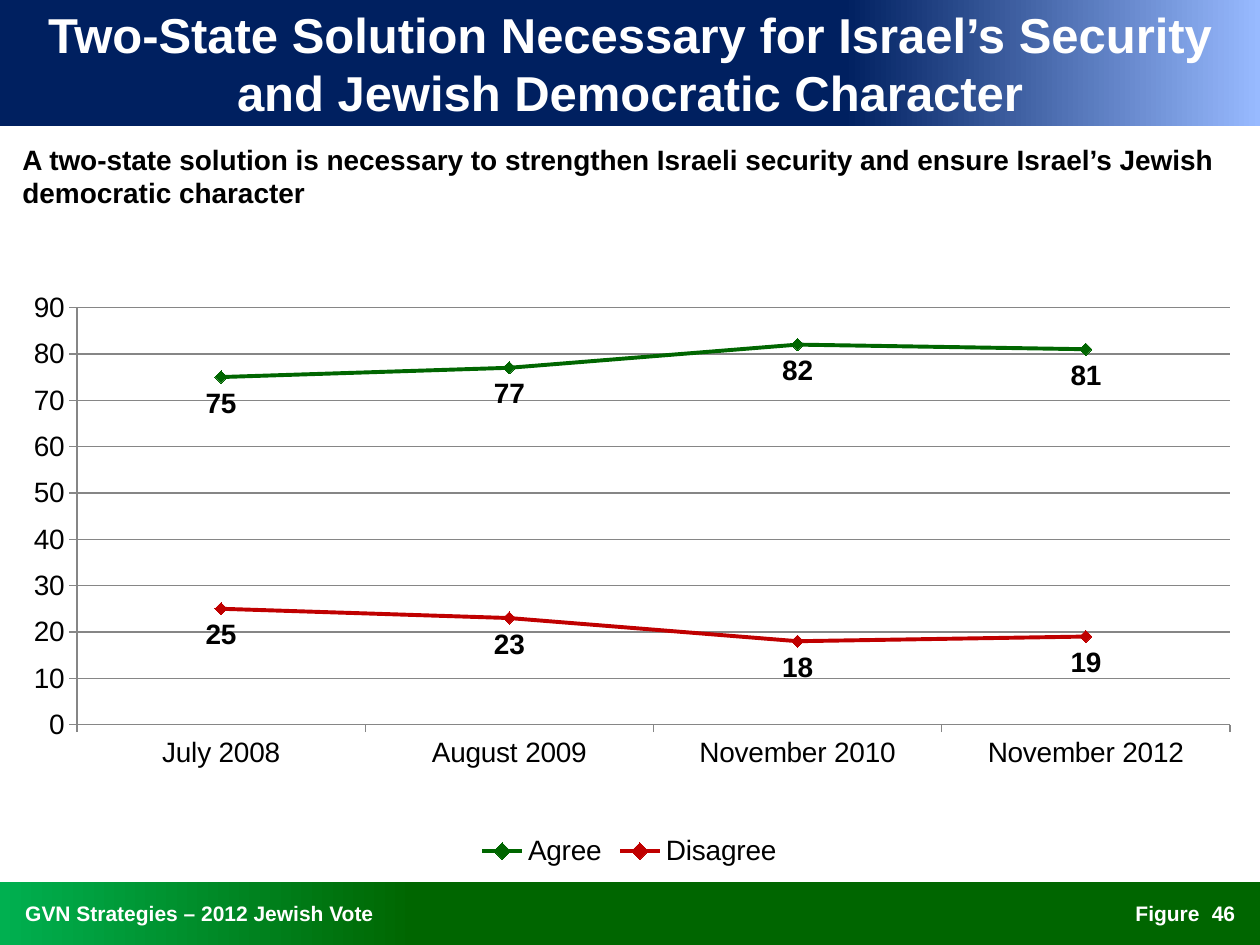
import dataclasses

import lxml.etree
import pptx
import pptx.chart.data
import pptx.dml.color
import pptx.enum.chart
import pptx.enum.shapes
import pptx.enum.text
import pptx.oxml
import pptx.oxml.ns
import pptx.util

Inches = pptx.util.Inches
Pt = pptx.util.Pt
Align = pptx.enum.text.PP_ALIGN
Anchor = pptx.enum.text.MSO_ANCHOR


def rgb(code):
    return pptx.dml.color.RGBColor.from_string(code)


@dataclasses.dataclass(frozen=True)
class Theme:
    font: str = "Arial"
    white: str = "FFFFFF"
    black: str = "000000"
    navy: str = "002060"
    sky: str = "98BAFF"
    green: str = "006600"
    lime: str = "00B050"
    red: str = "C00000"
    grey: str = "868686"
    head: int = 28
    body: int = 16
    foot: int = 12


THEME = Theme()


def add_band(slide, box, start, end, angle):
    band = slide.shapes.add_shape(
        pptx.enum.shapes.MSO_SHAPE.RECTANGLE, *map(Inches, box))
    band.shadow.inherit = False
    band.line.fill.background()
    band.fill.gradient()
    band.fill.gradient_angle = angle
    stops = band.fill.gradient_stops
    for stop, code, place in zip(stops, (start, end), (0, 0.33)):
        stop.color.rgb = rgb(code)
        stop.position = place


def add_text(slide, box, text, size, color, align=Align.LEFT,
             anchor=Anchor.MIDDLE, wrap=True, left=0.1, right=0.1):
    frame = slide.shapes.add_textbox(*map(Inches, box)).text_frame
    frame.text = text
    frame.word_wrap = wrap
    frame.vertical_anchor = anchor
    frame.margin_left, frame.margin_right = Inches(left), Inches(right)
    line = frame.paragraphs[0]
    line.alignment = align
    font = line.runs[0].font
    font.name, font.size, font.bold = THEME.font, Pt(size), True
    font.color.rgb = rgb(color)
    return line


def add_head(slide, box, text):
    add_band(slide, box, THEME.sky, THEME.navy, 180)
    add_text(slide, box, text, THEME.head, THEME.white, Align.CENTER,
             left=0.2, right=0.2)


def add_lead(slide, box, text):
    line = add_text(slide, box, text, THEME.body, THEME.black,
                    anchor=Anchor.TOP)
    line.space_before = Pt(0.2 * THEME.body)


def add_foot(slide, box, source, label, number):
    x, y, width, height = box
    end = x + width
    add_band(slide, box, THEME.lime, THEME.green, 0)
    add_text(slide, (end - 1.55, y, 1.17, height), label, THEME.foot,
             THEME.white, Align.RIGHT, wrap=False)
    add_text(slide, (x, y, 6.92, height), source, THEME.foot,
             THEME.white, wrap=False, left=0.2)
    add_text(slide, (end - 0.58, y, 0.58, height), number, THEME.foot,
             THEME.white, Align.CENTER)


def set_plot(chart, x, y, width, height):
    area = chart._chartSpace.chart.plotArea
    tag = pptx.oxml.ns.qn
    for old in area.findall(tag("c:layout")):
        area.remove(old)
    layout = lxml.etree.Element(tag("c:layout"))
    manual = lxml.etree.SubElement(layout, tag("c:manualLayout"))
    rules = {"layoutTarget": "inner", "xMode": "edge", "yMode": "edge",
             "x": x, "y": y, "w": width, "h": height}
    for name, value in rules.items():
        lxml.etree.SubElement(manual, tag(f"c:{name}"), val=str(value))
    area.insert(0, layout)


def style_line(series, color):
    series.smooth = False
    series.format.line.width = Pt(2.25)
    series.format.line.color.rgb = rgb(color)
    mark = series.marker
    mark.style = pptx.enum.chart.XL_MARKER_STYLE.DIAMOND
    mark.size = 7
    mark.format.fill.solid()
    mark.format.fill.fore_color.rgb = rgb(color)
    mark.format.line.color.rgb = rgb(color)
    labels = series.data_labels
    labels.show_value = True
    labels.position = pptx.enum.chart.XL_LABEL_POSITION.BELOW
    font = labels.font
    font.name, font.size, font.bold = THEME.font, Pt(THEME.body), True
    font.color.rgb = rgb(THEME.black)


def add_trend(slide, box, dates, rows):
    data = pptx.chart.data.CategoryChartData()
    data.categories = dates
    for name, values, color in rows:
        data.add_series(name, values)
    chart = slide.shapes.add_chart(
        pptx.enum.chart.XL_CHART_TYPE.LINE_MARKERS,
        *map(Inches, box), data).chart
    chart.has_title = False
    chart.font.name, chart.font.size = THEME.font, Pt(THEME.body)
    chart.font.color.rgb = rgb(THEME.black)
    chart.has_legend = True
    chart.legend.position = pptx.enum.chart.XL_LEGEND_POSITION.BOTTOM
    chart.legend.include_in_layout = False
    scale = chart.value_axis
    scale.minimum_scale, scale.maximum_scale, scale.major_unit = 0, 90, 10
    scale.has_major_gridlines = True
    for axis in (scale, chart.category_axis):
        axis.major_tick_mark = pptx.enum.chart.XL_TICK_MARK.OUTSIDE
        axis.format.line.color.rgb = rgb(THEME.grey)
    scale.major_gridlines.format.line.color.rgb = rgb(THEME.grey)
    chart.plots[0].vary_by_categories = False
    for series, (name, values, color) in zip(chart.plots[0].series, rows):
        style_line(series, color)
    set_plot(chart, 0.054, 0.041, 0.931, 0.709)


def main():
    deck = pptx.Presentation()
    deck.slide_width, deck.slide_height = Inches(10), Inches(7.5)
    slide = deck.slides.add_slide(deck.slide_layouts[6])
    add_head(slide, (0, 0, 10, 1),
             "Two-State Solution Necessary for Israel’s Security "
             "and Jewish Democratic Character")
    add_lead(slide, (0.08, 1.08, 9.83, 0.67),
             "A two-state solution is necessary to strengthen Israeli "
             "security and ensure Israel’s Jewish democratic character")
    add_trend(slide, (0.08, 2.25, 9.83, 4.67),
              ("July 2008", "August 2009", "November 2010",
               "November 2012"),
              (("Agree", (75, 77, 82, 81), THEME.green),
               ("Disagree", (25, 23, 18, 19), THEME.red)))
    add_foot(slide, (0, 7, 10, 0.5),
             "GVN Strategies – 2012 Jewish Vote", "Figure", "46")
    deck.save("out.pptx")


if __name__ == "__main__":
    main()
